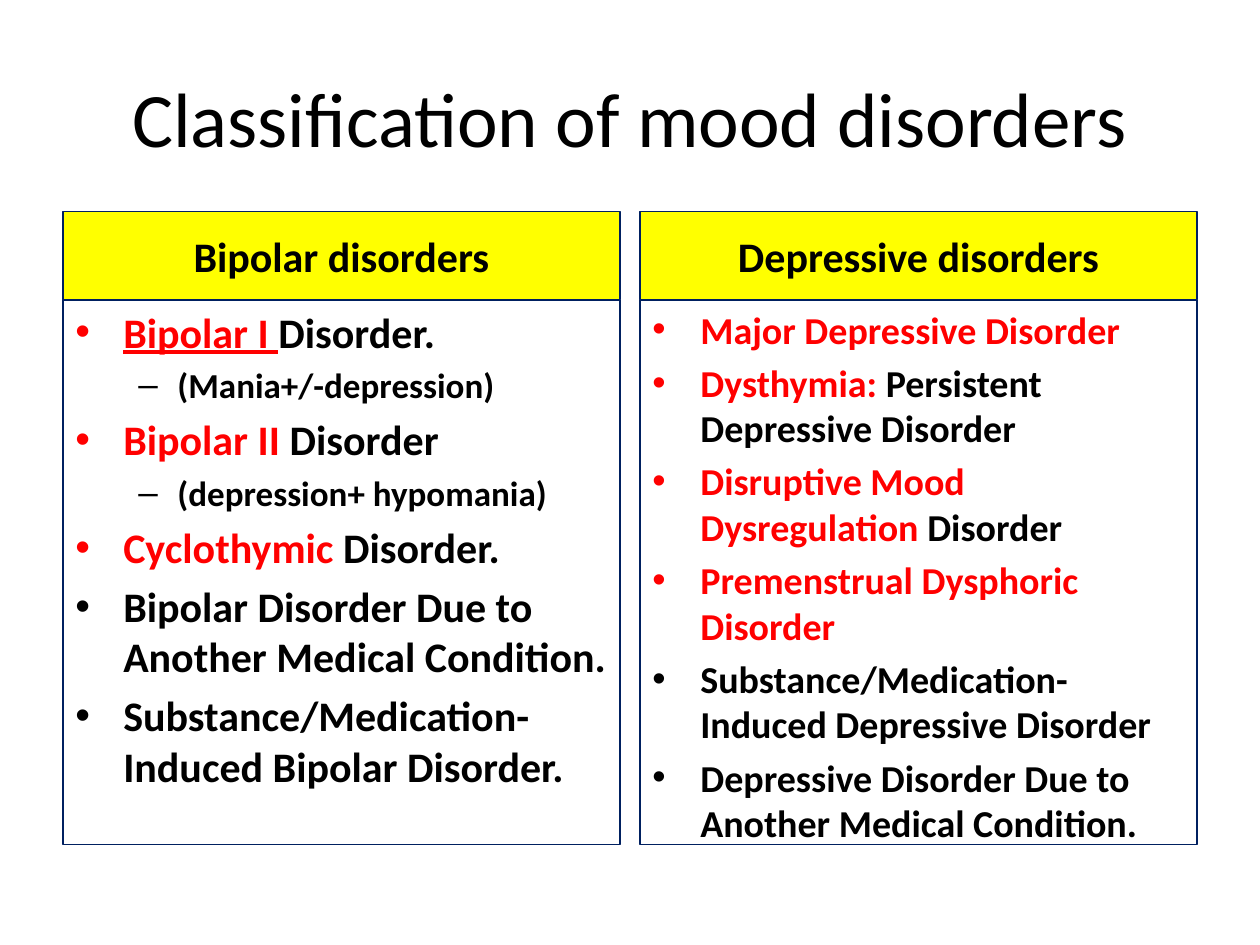
from lxml.etree import SubElement
from pptx import Presentation
from pptx.dml.color import RGBColor
from pptx.enum.shapes import MSO_SHAPE
from pptx.enum.text import MSO_ANCHOR, PP_ALIGN
from pptx.oxml.ns import qn
from pptx.util import Inches, Pt

BLACK = RGBColor(0x00, 0x00, 0x00)
RED = RGBColor(0xFF, 0x00, 0x00)
YELLOW = RGBColor(0xFF, 0xFF, 0x00)
NAVY = RGBColor(0x00, 0x20, 0x60)

# Each item: level, red words, black words
BIPOLAR = [
    (0, "Bipolar I ", "Disorder."),
    (1, "", "(Mania+/-depression)"),
    (0, "Bipolar II ", "Disorder"),
    (1, "", "(depression+ hypomania)"),
    (0, "Cyclothymic ", "Disorder."),
    (0, "", "Bipolar Disorder Due to Another Medical Condition."),
    (0, "", "Substance/Medication-Induced Bipolar Disorder."),
]
DEPRESSIVE = [
    (0, "Major Depressive Disorder", ""),
    (0, "Dysthymia: ", "Persistent Depressive Disorder"),
    (0, "Disruptive Mood Dysregulation ", "Disorder"),
    (0, "Premenstrual Dysphoric Disorder", ""),
    (0, "", "Substance/Medication-Induced Depressive Disorder"),
    (0, "", "Depressive Disorder Due to Another Medical Condition."),
]
# Each column: left, heading, items, text size
COLUMNS = [
    (0.5, "Bipolar disorders", BIPOLAR, 24),
    (5.08, "Depressive disorders", DEPRESSIVE, 21.7),
]
# Each level: bullet, left margin, hanging indent
LEVELS = [("•", 0.38, 0.38), ("–", 0.81, 0.31)]


def add_run(p, text, size, color=BLACK, bold=True):
    r = p.add_run()
    r.text = text
    r.font.name = "Calibri"
    r.font.size = Pt(size)
    r.font.bold = bold
    r.font.color.rgb = color
    return r


def add_box(left, top, height, anchor):
    sp = s.shapes.add_shape(MSO_SHAPE.RECTANGLE, Inches(left), Inches(top),
                            Inches(4.42), Inches(height))
    sp.shadow.inherit = False
    sp.fill.background()
    sp.line.color.rgb = NAVY
    sp.line.width = Pt(0.75)
    sp.text_frame.word_wrap = True
    sp.text_frame.vertical_anchor = anchor
    return sp


prs = Presentation()
prs.slide_width, prs.slide_height = Inches(10), Inches(7.5)
s = prs.slides.add_slide(prs.slide_layouts[6])

# Title
tf = s.shapes.add_textbox(Inches(0.5), Inches(0.3), Inches(9), Inches(1.25)).text_frame
tf.word_wrap = True
tf.vertical_anchor = MSO_ANCHOR.MIDDLE
p = tf.paragraphs[0]
p.alignment = PP_ALIGN.CENTER
add_run(p, "Classification of mood disorders", 44, bold=False)

for left, heading, items, size in COLUMNS:
    # Column heading
    sp = add_box(left, 1.68, 0.7, MSO_ANCHOR.BOTTOM)
    sp.fill.solid()
    sp.fill.fore_color.rgb = YELLOW
    tf = sp.text_frame
    tf.margin_bottom = Inches(0.15)
    p = tf.paragraphs[0]
    p.alignment = PP_ALIGN.CENTER
    add_run(p, heading, 24)

    # Bulleted list
    tf = add_box(left, 2.38, 4.32, MSO_ANCHOR.TOP).text_frame
    tf.margin_bottom = 0
    for i, (level, red, black) in enumerate(items):
        p = tf.add_paragraph() if i else tf.paragraphs[0]
        text_size = 20 if level else size
        p.level = level
        p.alignment = PP_ALIGN.LEFT
        p.space_before = Pt(round(text_size * 0.2, 1))

        bullet, margin, hanging = LEVELS[level]
        pPr = p._p.get_or_add_pPr()
        pPr.set("marL", str(Inches(margin)))
        pPr.set("indent", str(-Inches(hanging)))
        clr = SubElement(pPr, qn("a:buClr"))
        SubElement(clr, qn("a:srgbClr"), val=str(RED if red else BLACK))
        SubElement(pPr, qn("a:buFont"), typeface="Arial")
        SubElement(pPr, qn("a:buChar"), char=bullet)

        if red:
            r = add_run(p, red, text_size, RED)
            if red == "Bipolar I ":
                r.font.underline = True
        if black:
            add_run(p, black, text_size)

prs.save("out.pptx")
